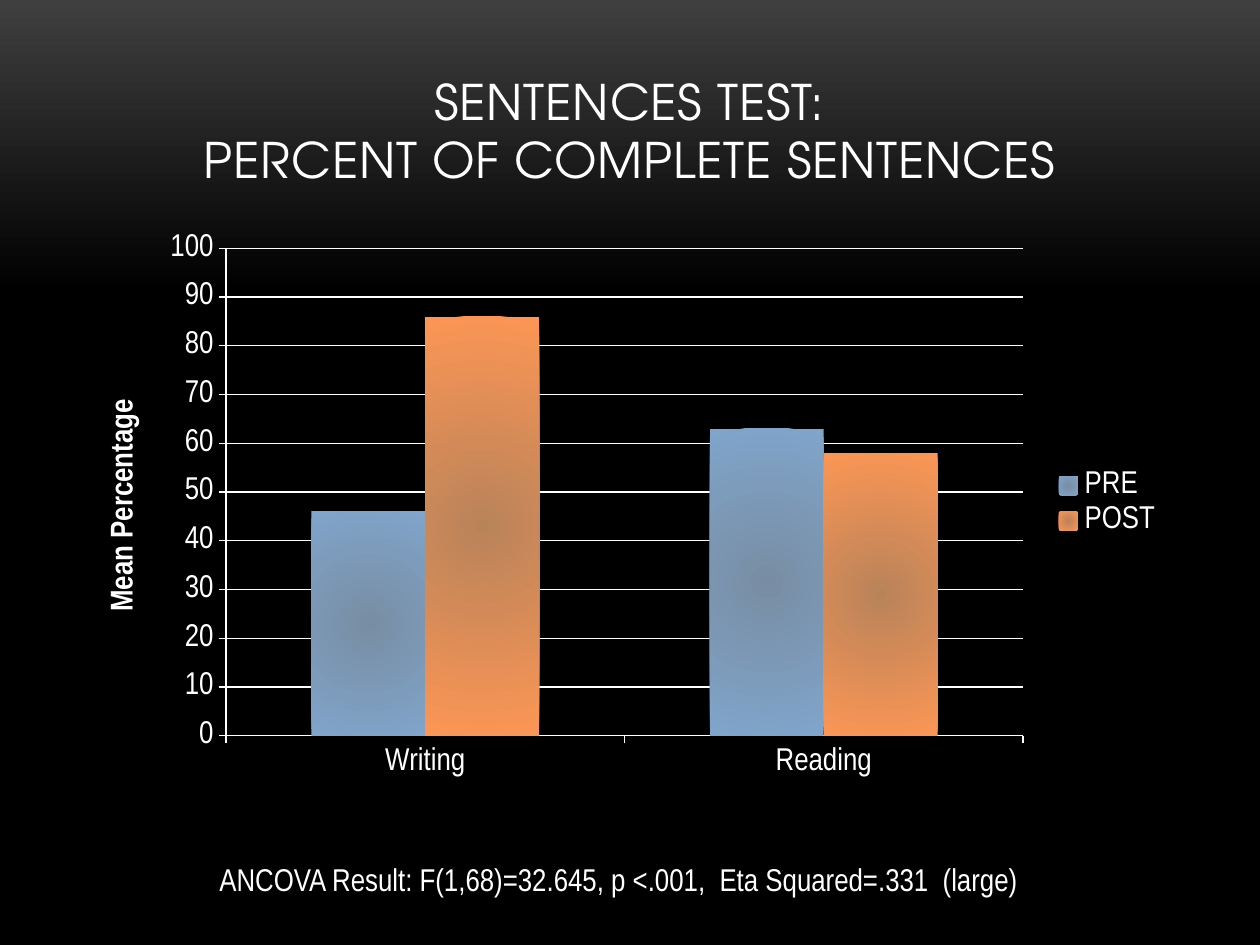
import copy

import pptx
import pptx.chart.data
import pptx.dml.color
import pptx.enum.chart
import pptx.enum.text
import pptx.oxml
import pptx.oxml.ns
import pptx.util

PX_PER_INCH = 126
WHITE = "FFFFFF"
BODY_FONT = "Arial Narrow"
TITLE_FONT = "TeX Gyre Adventor"


def px(length):
    return pptx.util.Emu(round(length * 914400 / PX_PER_INCH))


def color(hex_code):
    return pptx.dml.color.RGBColor.from_string(hex_code)


def format_text(font, size=18, name=BODY_FONT, fill=WHITE, bold=False):
    font.size = pptx.util.Pt(size)
    font.name = name
    font.bold = bold
    font.color.rgb = color(fill)


def paint_stops(fill, stops):
    fill.gradient()
    for stop, (position, hex_code) in zip(fill.gradient_stops, stops):
        stop.position = position
        stop.color.rgb = color(hex_code)


def make_radial(gradient):
    """Swap the linear direction of a gradient for a circle from the centre."""
    gradient.remove(gradient.find(pptx.oxml.ns.qn("a:lin")))
    gradient.append(pptx.oxml.parse_xml(
        f'<a:path {pptx.oxml.ns.nsdecls("a")} path="circle">'
        '<a:fillToRect l="50000" t="50000" r="50000" b="50000"/></a:path>'))


def place_plot(chart, x, y, w, h):
    """Fix the inner plot area, in fractions of the chart."""
    plot_area = chart._chartSpace.chart.plotArea
    for layout in plot_area.findall(pptx.oxml.ns.qn("c:layout")):
        plot_area.remove(layout)
    places = "".join(f'<c:{key} val="{value}"/>' for key, value in
                     dict(x=x, y=y, w=w, h=h).items())
    plot_area.insert(0, pptx.oxml.parse_xml(
        f'<c:layout {pptx.oxml.ns.nsdecls("c")}><c:manualLayout>'
        '<c:layoutTarget val="inner"/><c:xMode val="edge"/><c:yMode val="edge"/>'
        f'{places}</c:manualLayout></c:layout>'))


class SlideBuilder:
    def __init__(self, deck):
        self.page = deck.slides.add_slide(deck.slide_layouts[6])

    def background(self, top, bottom, fade_end):
        fill = self.page.background.fill
        paint_stops(fill, [(0, top), (fade_end, bottom)])
        fill.gradient_angle = 270
        stop_list = self.page._element.xpath(".//p:bg//a:gsLst")[0]
        last = copy.deepcopy(stop_list[-1])
        last.set("pos", "100000")
        stop_list.append(last)

    def text(self, lines, left, top, width, height, align="LEFT", anchor="TOP",
             spacing=0, **style):
        box = self.page.shapes.add_textbox(*map(px, (left, top, width, height)))
        frame = box.text_frame
        frame.word_wrap = True
        frame.vertical_anchor = pptx.enum.text.MSO_ANCHOR[anchor]
        para = frame.paragraphs[0]
        para.alignment = pptx.enum.text.PP_ALIGN[align]
        for index, line in enumerate(lines):
            if index:
                para.add_line_break()
            span = para.add_run()
            span.text = line
            format_text(span.font, **style)
            if spacing:
                span.font._element.set("spc", str(round(spacing * 100)))

    def column_chart(self, categories, series, axis_title, left, top, width, height):
        """Draw columns; series maps a name to values, centre and edge colours."""
        data = pptx.chart.data.CategoryChartData()
        data.categories = categories
        for name, (values, _, _) in series.items():
            data.add_series(name, values)
        chart = self.page.shapes.add_chart(
            pptx.enum.chart.XL_CHART_TYPE.COLUMN_CLUSTERED,
            *map(px, (left, top, width, height)), data).chart
        format_text(chart.font)
        chart.has_title = False
        chart.has_legend = True
        chart.legend.position = pptx.enum.chart.XL_LEGEND_POSITION.RIGHT
        chart.legend.include_in_layout = False
        plot = chart.plots[0]
        plot.gap_width = 150
        plot.overlap = 0
        plot.vary_by_categories = False
        for bars, (_, centre, edge) in zip(plot.series, series.values()):
            paint_stops(bars.format.fill, [(0, centre), (1, edge)])
            make_radial(bars._element.xpath("./c:spPr/a:gradFill")[0])

        value_axis = chart.value_axis
        value_axis.minimum_scale, value_axis.maximum_scale = 0, 100
        value_axis.major_unit = 10
        value_axis.has_major_gridlines = True
        title_frame = value_axis.axis_title.text_frame
        title_frame.text = axis_title
        format_text(title_frame.paragraphs[0].runs[0].font, bold=True)
        for axis in (chart.category_axis, value_axis):
            axis.major_tick_mark = pptx.enum.chart.XL_TICK_MARK.OUTSIDE
        for part in (chart.category_axis, value_axis, value_axis.major_gridlines):
            part.format.line.color.rgb = color(WHITE)
            part.format.line.width = pptx.util.Pt(0.75)
        place_plot(chart, x=0.13, y=0.05, w=0.73, h=0.86)


def main():
    deck = pptx.Presentation()
    deck.slide_width, deck.slide_height = px(1260), px(945)
    slide = SlideBuilder(deck)
    slide.background("3F3F3F", "000000", fade_end=0.31)
    slide.text(["SENTENCES TEST:", "PERCENT OF COMPLETE SENTENCES"],
               84, 38, 1092, 157, align="CENTER", anchor="BOTTOM",
               spacing=0.5, size=28, name=TITLE_FONT)
    slide.column_chart(
        ["Writing", "Reading"],
        {"PRE": ((46, 63), "788DA3", "80A5CB"),
         "POST": ((86, 58), "B9835A", "FC9655")},
        "Mean Percentage", 84, 220, 1092, 567)
    slide.text(["ANCOVA Result: F(1,68)=32.645, p <.001,  Eta Squared=.331  (large)"],
               207, 854, 883, 50)
    deck.save("out.pptx")


if __name__ == "__main__":
    main()
